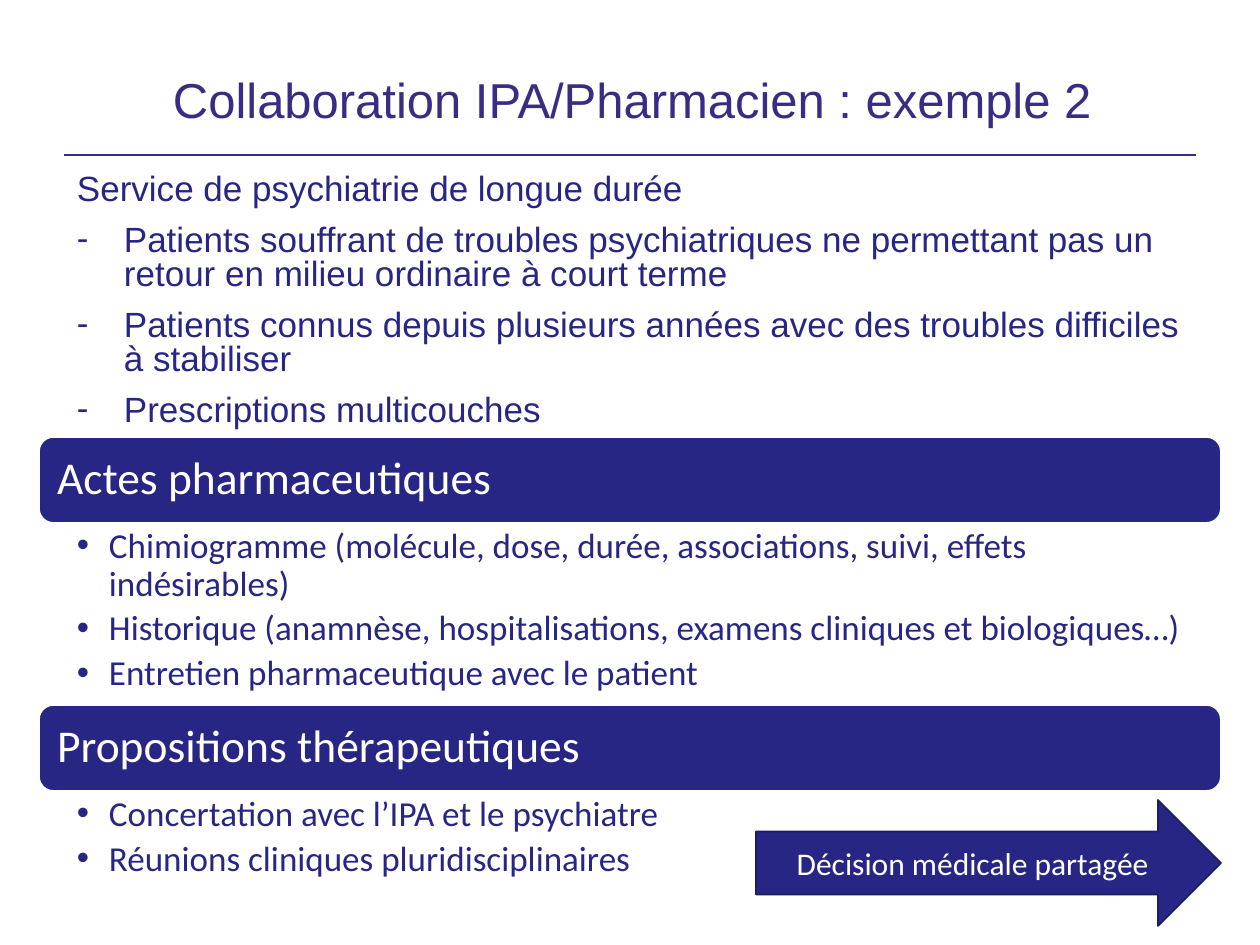
from dataclasses import dataclass

from lxml.etree import SubElement
from pptx import Presentation
from pptx.dml.color import RGBColor
from pptx.enum.shapes import MSO_CONNECTOR, MSO_SHAPE
from pptx.enum.text import MSO_ANCHOR as Anchor, MSO_AUTO_SIZE, PP_ALIGN as Align
from pptx.oxml.ns import qn
from pptx.util import Emu, Pt

EMU_PER_PX = 914400 / 126


def px(n: int) -> Emu:
    return Emu(round(n * EMU_PER_PX))


@dataclass(frozen=True)
class Theme:
    navy: str = "272685"
    title: str = "392C84"
    rule: str = "392C86"
    edge: str = "1D1C62"
    white: str = "FFFFFF"
    heading_font: str = "Arial"
    body_font: str = "Calibri"
    title_pt: int = 28
    band_pt: int = 26
    text_pt: int = 20
    arrow_pt: int = 18


T = Theme()


@dataclass(frozen=True)
class Box:
    x: int
    y: int
    w: int
    h: int

    def emu(self) -> tuple:
        return tuple(px(n) for n in (self.x, self.y, self.w, self.h))


@dataclass(frozen=True)
class Style:
    font: str
    size: int
    color: str
    spacing: float = 1.0
    before: int = 0
    after: int = 0
    align: Align = Align.LEFT


@dataclass(frozen=True)
class Item:
    text: str
    bullet: str = ""
    indent: int = 0


@dataclass(frozen=True)
class Section:
    top: int
    heading: str
    points: tuple
    height: int


TITLE = Style(T.heading_font, T.title_pt, T.title, 0.9)
INTRO = Style(T.heading_font, T.text_pt, T.navy, 0.8, before=10)
BAND = Style(T.body_font, T.band_pt, T.white, 0.9)
POINT = Style(T.body_font, T.text_pt, T.navy, 0.9, after=4)
ARROW = Style(T.body_font, T.arrow_pt, T.white, align=Align.CENTER)

BAND_X, BAND_W, BAND_H = 39, 1182, 86
INTRO_ITEMS = [Item("Service de psychiatrie de longue durée")] + [
    Item(text, "-", 47) for text in (
        "Patients souffrant de troubles psychiatriques ne permettant pas un "
        "retour en milieu ordinaire à court terme",
        "Patients connus depuis plusieurs années avec des troubles difficiles à stabiliser",
        "Prescriptions multicouches",
    )
]
SECTIONS = [
    Section(437, "Actes pharmaceutiques", (
        "Chimiogramme (molécule, dose, durée, associations, suivi, effets indésirables)",
        "Historique (anamnèse, hospitalisations, examens cliniques et biologiques…)",
        "Entretien pharmaceutique avec le patient",
    ), 181),
    Section(705, "Propositions thérapeutiques", (
        "Concertation avec l’IPA et le psychiatre",
        "Réunions cliniques pluridisciplinaires",
    ), 97),
]


def rgb(color: str) -> RGBColor:
    return RGBColor.from_string(color)


def write(tf, items: list, style: Style, anchor=Anchor.TOP,
          insets: tuple = (13, 6, 13, 6)) -> None:
    """Fill a text frame; insets are left, top, right, bottom."""
    left, top, right, bottom = map(px, insets)
    frame = dict(word_wrap=True, auto_size=MSO_AUTO_SIZE.NONE, vertical_anchor=anchor,
                 margin_left=left, margin_top=top, margin_right=right, margin_bottom=bottom)
    for name, value in frame.items():
        setattr(tf, name, value)
    for i, item in enumerate(items):
        p = tf.add_paragraph() if i else tf.paragraphs[0]
        layout = dict(alignment=style.align, line_spacing=style.spacing,
                      space_before=Pt(style.before if i else 0), space_after=Pt(style.after))
        for name, value in layout.items():
            setattr(p, name, value)
        if item.bullet:
            pPr = p._p.get_or_add_pPr()
            pPr.set("marL", str(px(item.indent)))
            pPr.set("indent", str(-px(item.indent)))
            SubElement(pPr, qn("a:buFont"), typeface="Arial")
            SubElement(pPr, qn("a:buChar"), char=item.bullet)
        r = p.add_run()
        r.text = item.text
        for name, value in dict(name=style.font, size=Pt(style.size), bold=False).items():
            setattr(r.font, name, value)
        r.font.color.rgb = rgb(style.color)


def add_text(s, box: Box, items: list, style: Style, **options) -> None:
    write(s.shapes.add_textbox(*box.emu()).text_frame, items, style, **options)


def add_filled(s, kind, box: Box, edge: str, text: str, style: Style, **options) -> None:
    sp = s.shapes.add_shape(kind, *box.emu())
    sp.shadow.inherit = False
    sp.fill.solid()
    sp.fill.fore_color.rgb = rgb(T.navy)
    sp.line.color.rgb = rgb(edge)
    sp.line.width = Pt(1)
    write(sp.text_frame, [Item(text)], style, anchor=Anchor.MIDDLE, **options)


def add_rule(s, x1: int, x2: int, y: int) -> None:
    line = s.shapes.add_connector(MSO_CONNECTOR.STRAIGHT, px(x1), px(y), px(x2), px(y))
    line.line.color.rgb = rgb(T.rule)
    line.line.width = Pt(1)
    SubElement(line._element.spPr, qn("a:effectLst"))


def add_section(s, section: Section) -> None:
    add_filled(s, MSO_SHAPE.ROUNDED_RECTANGLE, Box(BAND_X, section.top, BAND_W, BAND_H),
               T.white, section.heading, BAND, insets=(14, 10, 14, 10))
    add_text(s, Box(BAND_X, section.top + BAND_H, BAND_W, section.height),
             [Item(text, "•", 32) for text in section.points], POINT,
             insets=(38, 5, 25, 5))


def main() -> None:
    prs = Presentation()
    prs.slide_width, prs.slide_height = px(1260), px(945)
    s = prs.slides.add_slide(prs.slide_layouts[5])

    # Title and rule
    title = s.shapes.title
    title.left, title.top, title.width, title.height = Box(160, 50, 1036, 105).emu()
    write(title.text_frame, [Item("Collaboration IPA/Pharmacien : exemple 2")], TITLE,
          anchor=Anchor.MIDDLE)
    add_rule(s, 64, 1196, 155)

    # Patient context
    add_text(s, Box(64, 169, 1132, 280), INTRO_ITEMS, INTRO)

    # Headed lists
    for section in SECTIONS:
        add_section(s, section)

    # Outcome
    add_filled(s, MSO_SHAPE.RIGHT_ARROW, Box(756, 800, 465, 126), T.edge,
               "Décision médicale partagée", ARROW)

    prs.save("out.pptx")


if __name__ == "__main__":
    main()
